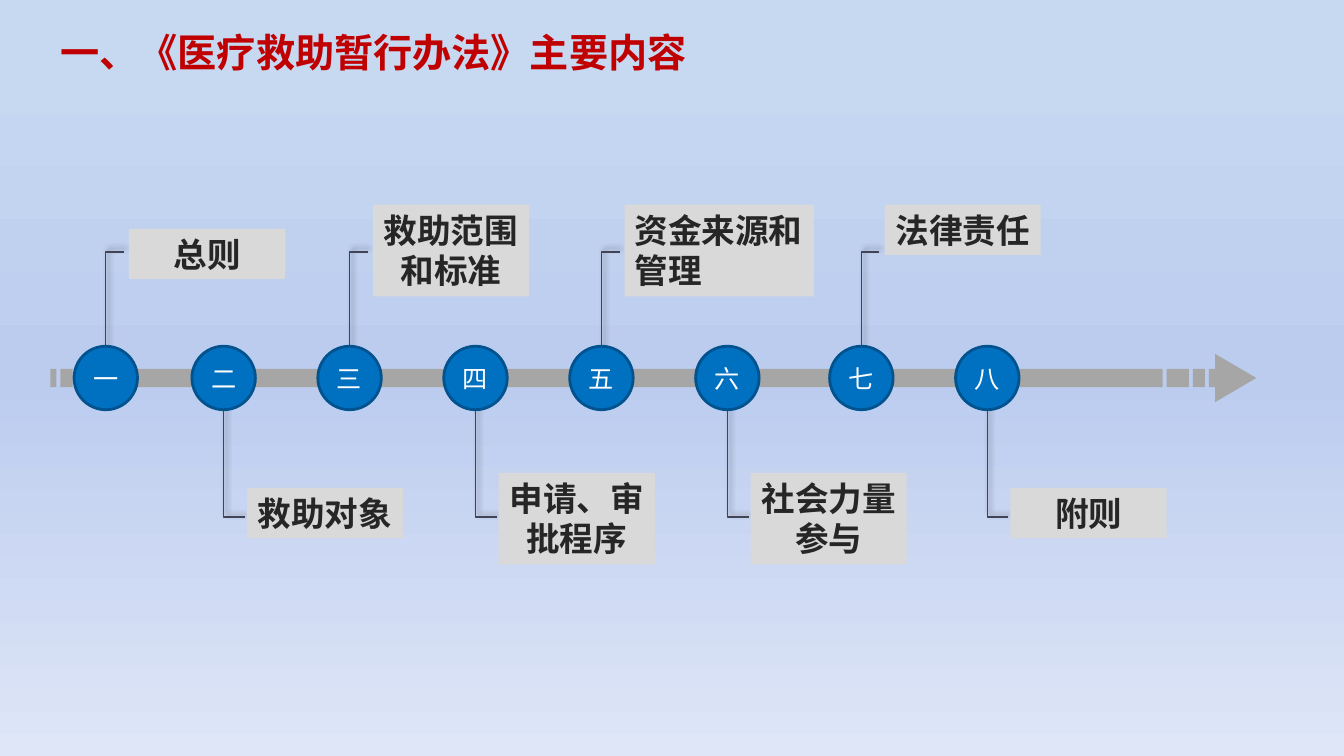
import pptx
import pptx.util
import pptx.dml.color
import pptx.enum.shapes
import pptx.enum.text
import pptx.oxml
import pptx.oxml.ns

Inches = pptx.util.Inches
Pt = pptx.util.Pt
RGBColor = pptx.dml.color.RGBColor
SHAPE = pptx.enum.shapes.MSO_SHAPE
ALIGN = pptx.enum.text.PP_ALIGN
ANCHOR = pptx.enum.text.MSO_ANCHOR
AUTO_SIZE = pptx.enum.text.MSO_AUTO_SIZE
qn = pptx.oxml.ns.qn

TITLE_RED = RGBColor(0xC0, 0x00, 0x00)
AXIS_GRAY = RGBColor(0xA6, 0xA6, 0xA6)
LABEL_GRAY = RGBColor(0xD9, 0xD9, 0xD9)
LABEL_TEXT = RGBColor(0x26, 0x26, 0x26)
NODE_BLUE = RGBColor(0x00, 0x70, 0xC0)
NODE_EDGE = RGBColor(0x00, 0x53, 0x8E)
NODE_TEXT = RGBColor(0xFF, 0xFF, 0xFF)
STEM = RGBColor(0x41, 0x44, 0x55)
SKY_TOP = RGBColor(0xC6, 0xD9, 0xF1)
SKY_MIDDLE = RGBColor(0xBC, 0xCC, 0xEF)
SKY_BOTTOM = RGBColor(0xDE, 0xE6, 0xF7)
SKY = [(0, SKY_TOP), (8, SKY_TOP), (50, SKY_MIDDLE), (100, SKY_BOTTOM)]

FONT = "Noto Sans CJK SC"
TITLE_FONT = {"name": FONT, "size": Pt(28), "bold": True}
LABEL_FONT = {"name": FONT, "size": Pt(24), "bold": True}
NODE_FONT = {"name": FONT, "size": Pt(18), "bold": False}
TOP_FRAME = {"word_wrap": True, "vertical_anchor": ANCHOR.TOP,
             "auto_size": AUTO_SIZE.SHAPE_TO_FIT_TEXT}
NODE_FRAME = {"word_wrap": True, "vertical_anchor": ANCHOR.MIDDLE,
              "margin_left": 0, "margin_right": 0}

NODE_SIZE = 0.63
AXIS_BARS = [(0, 0.06), (0.1, 0.12), (0.26, 0.22), (0.53, 10.51),
             (11.08, 0.22), (11.34, 0.12), (11.5, 0.06)]
CHAPTERS = [
    ("一", "总则", 1.05, 2.27, 1.55, 0.5, ALIGN.CENTER),
    ("二", "救助对象", 2.22, 4.84, 1.55, 0.5, ALIGN.CENTER),
    ("三", "救助范围和标准", 3.47, 2.03, 1.55, 0.91, ALIGN.CENTER),
    ("四", "申请、审批程序", 4.72, 4.69, 1.55, 0.91, ALIGN.CENTER),
    ("五", "资金来源和管理", 5.97, 2.03, 1.88, 0.91, ALIGN.LEFT),
    ("六", "社会力量参与", 7.22, 4.69, 1.55, 0.91, ALIGN.CENTER),
    ("七", "法律责任", 8.55, 2.03, 1.55, 0.5, ALIGN.CENTER),
    ("八", "附则", 9.8, 4.84, 1.55, 0.5, ALIGN.CENTER),
]


def apply_format(target, values):
    for key, value in values.items():
        setattr(target, key, value)


def write(shape, words, frame_format, font_format, color, align):
    frame = shape.text_frame
    frame.text = words
    apply_format(frame, frame_format)
    paragraph = frame.paragraphs[0]
    paragraph.alignment = align
    font = paragraph.runs[0].font
    apply_format(font, font_format)
    font.color.rgb = color
    latin = paragraph.runs[0]._r.rPr.find(qn("a:latin"))
    east_asian = latin.makeelement(qn("a:ea"), {"typeface": FONT})
    latin.addnext(east_asian)


def add_block(slide, kind, box, color):
    block = slide.shapes.add_shape(kind, *map(Inches, box))
    block.shadow.inherit = False
    block.fill.solid()
    block.fill.fore_color.rgb = color
    block.line.fill.background()
    return block


def paint_background(slide):
    fill = slide.background.fill
    fill.gradient()
    fill.gradient_angle = 270
    stops = slide.element.find(".//" + qn("a:gsLst"))
    for stop in list(stops):
        stops.remove(stop)
    for percent, color in SKY:
        stops.append(pptx.oxml.parse_xml(
            f'<a:gs {pptx.oxml.ns.nsdecls("a")} pos="{percent * 1000}">'
            f'<a:srgbClr val="{color}"/></a:gs>'))


def place_title(slide, box):
    title = slide.shapes.title
    places = zip(("left", "top", "width", "height"), map(Inches, box))
    apply_format(title, dict(places))
    write(title, "一、《医疗救助暂行办法》主要内容", TOP_FRAME, TITLE_FONT,
          TITLE_RED, ALIGN.LEFT)


def draw_axis(slide, box):
    left, top, width, height = box
    thickness, head_length = 0.18, 0.41
    for offset, length in AXIS_BARS:
        add_block(slide, SHAPE.RECTANGLE,
                  (left + offset, top + (height - thickness) / 2, length, thickness),
                  AXIS_GRAY)
    head = add_block(slide, SHAPE.ISOSCELES_TRIANGLE,
                     (left + width - (head_length + height) / 2,
                      top + (height - head_length) / 2, height, head_length),
                     AXIS_GRAY)
    head.rotation = 90


def draw_stem(slide, start, end):
    stem = slide.shapes.add_connector(pptx.enum.shapes.MSO_CONNECTOR.ELBOW,
                                      *map(Inches, start + end))
    stem.line.color.rgb = STEM
    stem.line.width = Pt(1)
    properties = stem._element.spPr
    geometry = properties.find(qn("a:prstGeom"))
    geometry.set("prst", "bentConnector2")
    properties.append(pptx.oxml.parse_xml(
        f'<a:effectLst {pptx.oxml.ns.nsdecls("a")}>'
        f'<a:outerShdw blurRad="{Pt(4)}" dist="{Pt(3)}" dir="18900000">'
        '<a:srgbClr val="000000"><a:alpha val="40000"/></a:srgbClr>'
        '</a:outerShdw></a:effectLst>'))


def draw_chapter(slide, numeral, heading, center, axis_y, box, align):
    above = box[1] < axis_y
    reach, bend, edge = (0.18, 2.5, 3.46) if above else (0.21, 5.13, 4.06)
    draw_stem(slide, (center + reach, bend), (center, edge))
    label = add_block(slide, SHAPE.RECTANGLE, box, LABEL_GRAY)
    write(label, heading, TOP_FRAME, LABEL_FONT, LABEL_TEXT, align)
    node = add_block(slide, SHAPE.OVAL,
                     (center - NODE_SIZE / 2, axis_y - NODE_SIZE / 2,
                      NODE_SIZE, NODE_SIZE), NODE_BLUE)
    node.line.color.rgb = NODE_EDGE
    node.line.width = Pt(2)
    write(node, numeral, NODE_FRAME, NODE_FONT, NODE_TEXT, ALIGN.CENTER)


def draw_timeline(slide, box):
    draw_axis(slide, box)
    axis_y = box[1] + box[3] / 2
    for numeral, heading, center, top, width, height, align in CHAPTERS:
        draw_chapter(slide, numeral, heading, center, axis_y,
                     (center + 0.23, top, width, height), align)


def main():
    presentation = pptx.Presentation()
    presentation.slide_width = Inches(13.34)
    presentation.slide_height = Inches(7.5)
    slide = presentation.slides.add_slide(presentation.slide_layouts[5])
    paint_background(slide)
    place_title(slide, (0.5, 0.23, 7.34, 0.57))
    draw_timeline(slide, (0.5, 3.51, 11.97, 0.48))
    presentation.save("out.pptx")


if __name__ == "__main__":
    main()
